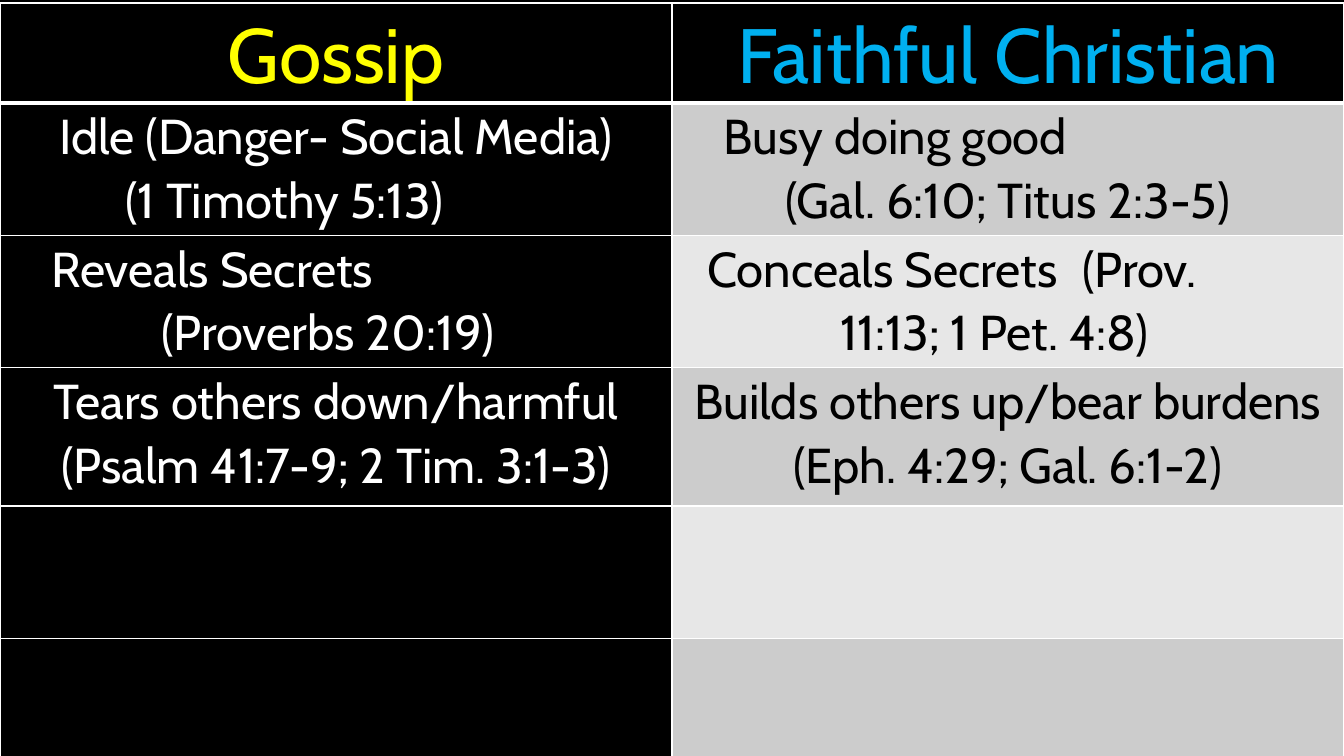
from dataclasses import dataclass

from lxml.etree import SubElement
from pptx import Presentation
from pptx.dml.color import RGBColor
from pptx.enum.text import MSO_ANCHOR, PP_ALIGN
from pptx.oxml.ns import qn
from pptx.util import Inches, Pt


@dataclass(frozen=True)
class Theme:
    font: str = "Cabin"
    heading_size: int = 55
    body_size: int = 35
    line_spacing: float = 1.07
    black: str = "000000"
    white: str = "FFFFFF"
    yellow: str = "FFFF00"
    blue: str = "00B0F0"
    bands: tuple = ("CCCCCC", "E7E7E7")
    thin_rule: int = 1
    thick_rule: int = 3


@dataclass(frozen=True)
class Line:
    text: str
    indent: float = None
    tab: float = None


THEME = Theme()
WIDTH, HEIGHT = Inches(13.33), Inches(7.5)
TABLE_TOP = 0.004
ROW_SHARES = (0.128, 0.175, 0.175, 0.183, 0.175, 0.188)
HEADINGS = (("Gossip", THEME.yellow), ("Faithful Christian", THEME.blue))
CONTRASTS = (
    (
        (Line("Idle (Danger- Social Media)"), Line("(1 Timothy 5:13)", 1.17)),
        (Line("Busy doing good", 0.44), Line("(Gal. 6:10; Titus 2:3-5)")),
    ),
    (
        (Line("Reveals Secrets", 0.44), Line("(Proverbs 20:19)", 1.53)),
        (
            Line("Conceals Secrets\t(Prov.", 0.28, 5.06),
            Line("11:13; 1 Pet. 4:8)", 1.6),
        ),
    ),
    (
        (Line("Tears others down/harmful (Psalm 41:7-9; 2 Tim. 3:1-3)"),),
        (Line("Builds others up/bear burdens (Eph. 4:29; Gal. 6:1-2)"),),
    ),
    ((), ()),
    ((), ()),
)


def color(code):
    return RGBColor.from_string(code)


def paint(fill, code):
    fill.solid()
    fill.fore_color.rgb = color(code)


def add_border(cell, side, points):
    border = SubElement(cell._tc.get_or_add_tcPr(), qn(f"a:ln{side}"), w=str(Pt(points)))
    solid = SubElement(border, qn("a:solidFill"))
    SubElement(solid, qn("a:srgbClr"), val=THEME.white)


def style_cell(cell, fill_code, top_rule, bottom_rule):
    cell.margin_left = cell.margin_right = Inches(0.07)
    cell.margin_top = cell.margin_bottom = 0
    cell.vertical_anchor = MSO_ANCHOR.TOP
    rules = {"L": THEME.thin_rule, "R": THEME.thin_rule, "T": top_rule, "B": bottom_rule}
    for side, points in rules.items():
        add_border(cell, side, points)
    paint(cell.fill, fill_code)


def write_line(para, line, size, text_code):
    para.text = line.text
    para.alignment = PP_ALIGN.CENTER if line.indent is None else PP_ALIGN.LEFT
    para.line_spacing = THEME.line_spacing
    properties = para._p.get_or_add_pPr()
    if line.indent is not None:
        properties.set("marL", "0")
        properties.set("indent", str(Inches(line.indent)))
    if line.tab is not None:
        tabs = SubElement(properties, qn("a:tabLst"))
        SubElement(tabs, qn("a:tab"), pos=str(Inches(line.tab)), algn="l")
    para.font.name = THEME.font
    para.font.size = Pt(size)
    para.font.bold = False
    para.font.color.rgb = color(text_code)


def write_cell(cell, lines, size, text_code):
    frame = cell.text_frame
    for index, line in enumerate(lines):
        para = frame.add_paragraph() if index else frame.paragraphs[0]
        write_line(para, line, size, text_code)


def add_comparison(page):
    table = page.shapes.add_table(
        len(ROW_SHARES), len(HEADINGS), 0, int(HEIGHT * TABLE_TOP),
        WIDTH, int(HEIGHT * sum(ROW_SHARES)),
    ).table
    table.first_row = False
    table.horz_banding = False
    for row, share in zip(table.rows, ROW_SHARES):
        row.height = int(HEIGHT * share)
    for column, (heading, heading_code) in enumerate(HEADINGS):
        cell = table.cell(0, column)
        style_cell(cell, THEME.black, THEME.thin_rule, THEME.thick_rule)
        write_cell(cell, (Line(heading),), THEME.heading_size, heading_code)
    for index, contrast in enumerate(CONTRASTS):
        top_rule = THEME.thin_rule if index else THEME.thick_rule
        fills = (THEME.black, THEME.bands[index % 2])
        text_codes = (THEME.white, THEME.black)
        for column, lines in enumerate(contrast):
            cell = table.cell(index + 1, column)
            style_cell(cell, fills[column], top_rule, THEME.thin_rule)
            write_cell(cell, lines, THEME.body_size, text_codes[column])


def main():
    deck = Presentation()
    deck.slide_width, deck.slide_height = WIDTH, HEIGHT
    page = deck.slides.add_slide(deck.slide_layouts[6])
    paint(page.background.fill, THEME.black)
    add_comparison(page)
    deck.save("out.pptx")


if __name__ == "__main__":
    main()
